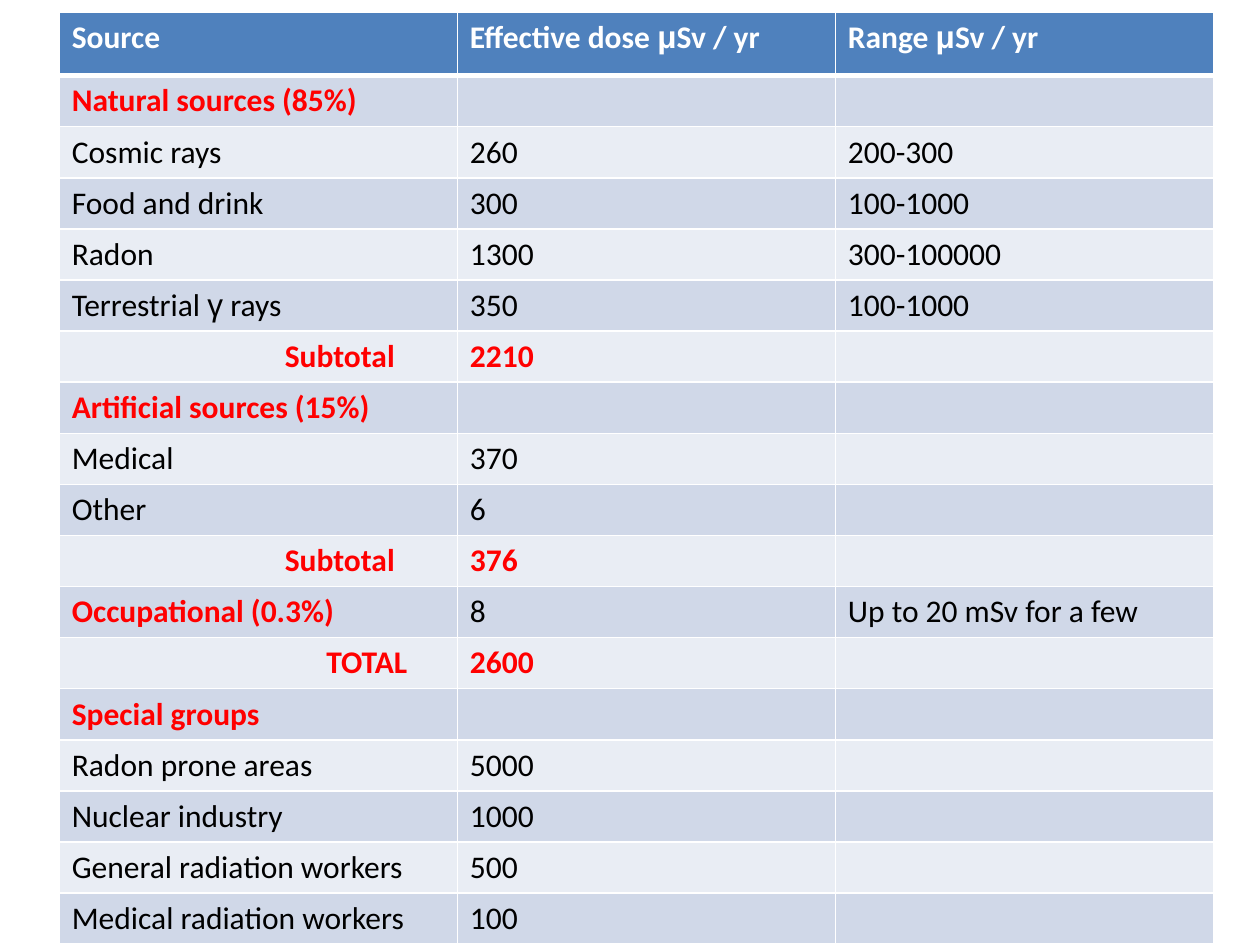
from dataclasses import dataclass
from itertools import groupby

from lxml.etree import SubElement
from pptx import Presentation
from pptx.dml.color import RGBColor
from pptx.oxml.ns import qn
from pptx.table import Table, _Cell
from pptx.util import Inches, Pt

WHITE = RGBColor(0xFF, 0xFF, 0xFF)
BLACK = RGBColor(0x00, 0x00, 0x00)
RED = RGBColor(0xFF, 0x00, 0x00)
HEADER_BLUE = RGBColor(0x4F, 0x81, 0xBD)
BANDS = (RGBColor(0xD0, 0xD8, 0xE8), RGBColor(0xE9, 0xED, 0xF4))

WIDTH, HEIGHT = 10, 7.5
LEFT, TOP = 0.47, 0.1
COLUMN_WIDTHS = (3.16, 3, 3)
HEADER_HEIGHT = 0.5
SUBTOTAL_INDENT, TOTAL_INDENT = 1.69, 2.02
GREEK = "μγ"


@dataclass(frozen=True)
class DoseRow:
    source: str
    dose: str = ""
    limits: str = ""
    red_source: bool = False
    red_dose: bool = False
    indent: float = 0


def heading(source: str, dose: str = "", limits: str = "") -> DoseRow:
    return DoseRow(source, dose, limits, red_source=True)


def summary(source: str, dose: str, indent: float) -> DoseRow:
    return DoseRow(source, dose, red_source=True, red_dose=True, indent=indent)


HEADERS = ("Source", "Effective dose μSv / yr", "Range μSv / yr")
ROWS = (
    heading("Natural sources (85%)"),
    DoseRow("Cosmic rays", "260", "200-300"),
    DoseRow("Food and drink", "300", "100-1000"),
    DoseRow("Radon", "1300", "300-100000"),
    DoseRow("Terrestrial γ rays", "350", "100-1000"),
    summary("Subtotal", "2210", SUBTOTAL_INDENT),
    heading("Artificial sources (15%)"),
    DoseRow("Medical", "370"),
    DoseRow("Other", "6"),
    summary("Subtotal", "376", SUBTOTAL_INDENT),
    heading("Occupational (0.3%)", "8", "Up to 20 mSv for a few"),
    summary("TOTAL", "2600", TOTAL_INDENT),
    heading("Special groups"),
    DoseRow("Radon prone areas", "5000"),
    DoseRow("Nuclear industry", "1000"),
    DoseRow("General radiation workers", "500"),
    DoseRow("Medical radiation workers", "100"),
)


def add_borders(cell: _Cell, bottom: float, top: float) -> None:
    properties = cell._tc.get_or_add_tcPr()
    for side, points in (("L", 1), ("R", 1), ("T", top), ("B", bottom)):
        line = SubElement(properties, qn(f"a:ln{side}"), w=str(Pt(points)))
        fill = SubElement(line, qn("a:solidFill"))
        SubElement(fill, qn("a:srgbClr"), val=str(WHITE))


def write_cell(cell: _Cell, text: str, color: RGBColor, bold: bool,
               indent: float = 0) -> None:
    para = cell.text_frame.paragraphs[0]
    para.font.size = Pt(18)
    if indent:
        para._p.get_or_add_pPr().set("marL", str(Inches(indent)))
    for is_greek, letters in groupby(text, key=lambda letter: letter in GREEK):
        span = para.add_run()
        span.text = "".join(letters)
        span.font.name = "Arial" if is_greek else "Calibri"
        span.font.size = Pt(18)
        span.font.bold = bold
        span.font.color.rgb = color


def paint_cell(cell: _Cell, color: RGBColor, bottom: float = 1, top: float = 1) -> None:
    add_borders(cell, bottom, top)
    cell.fill.solid()
    cell.fill.fore_color.rgb = color


def fill_header(table: Table) -> None:
    for column, text in enumerate(HEADERS):
        cell = table.cell(0, column)
        paint_cell(cell, HEADER_BLUE, bottom=3)
        write_cell(cell, text, WHITE, True)


def fill_row(table: Table, number: int, row: DoseRow) -> None:
    entries = (
        (row.source, row.red_source, row.indent),
        (row.dose, row.red_dose, 0),
        (row.limits, False, 0),
    )
    for column, (text, red, indent) in enumerate(entries):
        cell = table.cell(number, column)
        paint_cell(cell, BANDS[(number - 1) % 2], top=3 if number == 1 else 1)
        write_cell(cell, text, RED if red else BLACK, red, indent)


def main() -> None:
    deck = Presentation()
    deck.slide_width, deck.slide_height = Inches(WIDTH), Inches(HEIGHT)
    page = deck.slides.add_slide(deck.slide_layouts[6])
    table = page.shapes.add_table(
        len(ROWS) + 1, len(HEADERS), Inches(LEFT), Inches(TOP),
        Inches(sum(COLUMN_WIDTHS)), Inches(HEIGHT - TOP),
    ).table
    for column, width in zip(table.columns, COLUMN_WIDTHS):
        column.width = Inches(width)
    row_height = (HEIGHT - TOP - HEADER_HEIGHT) / len(ROWS)
    for number, line in enumerate(table.rows):
        line.height = Inches(row_height if number else HEADER_HEIGHT)
    fill_header(table)
    for number, row in enumerate(ROWS, start=1):
        fill_row(table, number, row)
    deck.save("out.pptx")


if __name__ == "__main__":
    main()
